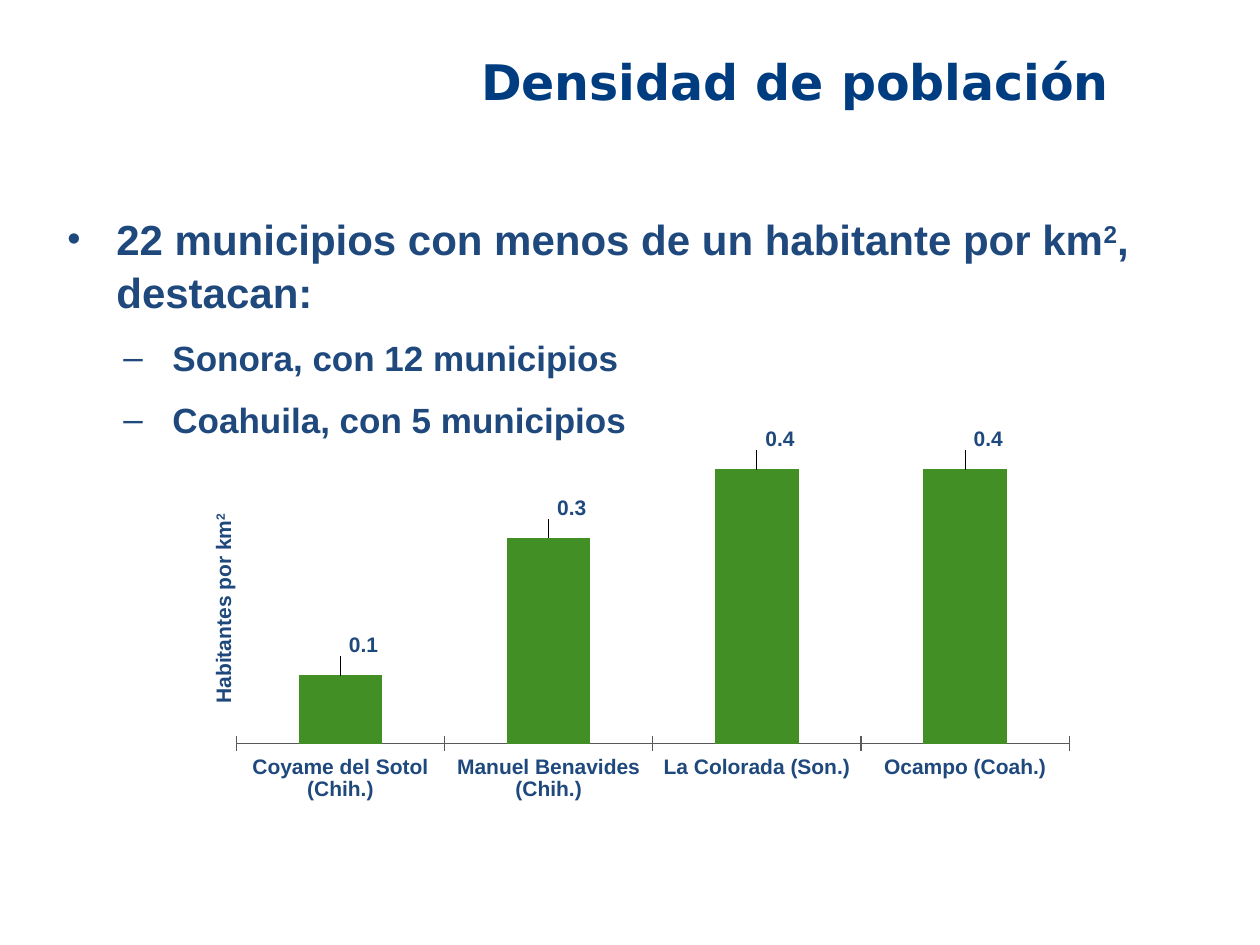
import pptx
import pptx.chart.data
import pptx.dml.color
import pptx.enum.chart
import pptx.enum.text
import pptx.oxml
import pptx.oxml.ns
import pptx.util

EMU_PER_PX = 914400 // 126
COLORS = {"title": "003D80", "text": "1F497D", "bar": "418F25", "axis": "595959"}
DENSITIES = {
    "Coyame del Sotol (Chih.)": 0.1,
    "Manuel Benavides (Chih.)": 0.3,
    "La Colorada (Son.)": 0.4,
    "Ocampo (Coah.)": 0.4,
}


def px(length):
    return pptx.util.Emu(length * EMU_PER_PX)


def rgb(name):
    return pptx.dml.color.RGBColor.from_string(COLORS[name])


def manual_layout(target="", modes="", **fractions):
    """Return a c:layout element with the given x, y, w and h fractions."""
    values = "".join(f'<c:{key} val="{value}"/>' for key, value in fractions.items())
    return pptx.oxml.parse_xml(
        f'<c:layout {pptx.oxml.ns.nsdecls("c")}><c:manualLayout>'
        f"{target}{modes}{values}</c:manualLayout></c:layout>")


class DensitySlide:
    def __init__(self, presentation):
        self.slide = presentation.slides.add_slide(presentation.slide_layouts[6])
        self.align = pptx.enum.text.PP_ALIGN

    def style(self, font, size, color="text", face="Arial"):
        font.name, font.size, font.bold = face, pptx.util.Pt(size), True
        font.color.rgb = rgb(color)

    def text_box(self, left, top, width, height):
        frame = self.slide.shapes.add_textbox(*map(px, (left, top, width, height))).text_frame
        frame.word_wrap = True
        return frame

    def add_runs(self, paragraph, parts, size, **look):
        """Fill a paragraph; every second part is superscript."""
        for index, part in enumerate(parts):
            run = paragraph.add_run()
            run.text = part
            self.style(run.font, size, **look)
            if index % 2:
                run.font._element.set("baseline", "30000")

    def title(self, text, *box):
        frame = self.text_box(*box)
        frame.margin_left = frame.margin_right = frame.margin_top = frame.margin_bottom = 0
        heading = frame.paragraphs[0]
        heading.alignment = self.align.CENTER
        self.add_runs(heading, [text], 28, color="title", face="DejaVu Sans")

    def bullets(self, items, *box):
        """Each item is (level, text parts)."""
        frame = self.text_box(*box)
        for index, (level, parts) in enumerate(items):
            item = frame.paragraphs[0] if index == 0 else frame.add_paragraph()
            item.level = level
            item.line_spacing = 1.05
            item.space_before = pptx.util.Pt(10 if index else 0)
            properties = item._p.get_or_add_pPr()
            properties.set("marL", str(px(105 if level else 49)))
            properties.set("indent", str(px(-49)))
            mark, scale = ("–", 100) if level else ("•", 90)
            for tag, attribute, value in (("buSzPct", "val", scale * 1000),
                                          ("buFont", "typeface", "Arial"),
                                          ("buChar", "char", mark)):
                properties.append(pptx.oxml.parse_xml(
                    f'<a:{tag} {pptx.oxml.ns.nsdecls("a")} {attribute}="{value}"/>'))
            self.add_runs(item, parts, 20 if level else 24)

    def vertical_label(self, parts, *box):
        frame = self.text_box(*box)
        frame._txBody.bodyPr.set("vert", "vert270")
        label = frame.paragraphs[0]
        label.alignment = self.align.CENTER
        self.add_runs(label, parts, 12)

    def column_chart(self, densities, *box):
        enums = pptx.enum.chart
        number_format = r"###\ ###\ ##0.0"
        data = pptx.chart.data.CategoryChartData(number_format=number_format)
        data.categories = list(densities)
        data.add_series("Habitantes por km²", list(densities.values()))
        chart = self.slide.shapes.add_chart(
            enums.XL_CHART_TYPE.COLUMN_CLUSTERED, *map(px, box), data).chart
        chart.has_legend = chart.has_title = False
        self.style(chart.font, 12)

        plot_area = chart._chartSpace.chart.plotArea
        for old in plot_area.findall(pptx.oxml.ns.qn("c:layout")):
            plot_area.remove(old)
        plot_area.insert(0, manual_layout(
            '<c:layoutTarget val="inner"/>', '<c:xMode val="edge"/><c:yMode val="edge"/>',
            x=0.044, y=0.073, w=0.956, h=0.664))

        places = chart.category_axis
        places.major_tick_mark = enums.XL_TICK_MARK.CROSS
        places.format.line.color.rgb = rgb("axis")
        places.format.line.width = pptx.util.Pt(0.75)
        self.style(places.tick_labels.font, 12)
        scale = chart.value_axis
        scale.visible = scale.has_major_gridlines = False
        scale.minimum_scale, scale.maximum_scale = 0, 0.43

        plot = chart.plots[0]
        plot.vary_by_categories = False
        plot.gap_width = 150
        columns = plot.series[0]
        columns.format.fill.solid()
        columns.format.fill.fore_color.rgb = rgb("bar")
        labels = columns.data_labels
        labels.show_value = True
        labels.number_format, labels.number_format_is_linked = number_format, False
        self.style(labels.font, 12)
        for index in range(len(densities)):
            label = columns.points[index].data_label
            self.style(label.font, 12)
            label.position = enums.XL_LABEL_POSITION.OUTSIDE_END
        for label in columns._element.xpath("c:dLbls/c:dLbl"):
            label.insert(1, manual_layout(x=0.02, y=-0.03))


def main():
    presentation = pptx.Presentation()
    presentation.slide_width, presentation.slide_height = px(1260), px(945)
    page = DensitySlide(presentation)
    page.title("Densidad de población", 330, 52, 930, 135)
    page.bullets([
        (0, ["22 municipios con menos de un habitante por km", "2", ", destacan:"]),
        (1, ["Sonora, con 12 municipios"]),
        (1, ["Coahuila, con 5 municipios"]),
    ], 55, 205, 1155, 233)
    page.column_chart(DENSITIES, 198, 416, 872, 445)
    page.vertical_label(["Habitantes por km", "2"], 204, 472, 50, 273)
    presentation.save("out.pptx")


if __name__ == "__main__":
    main()
